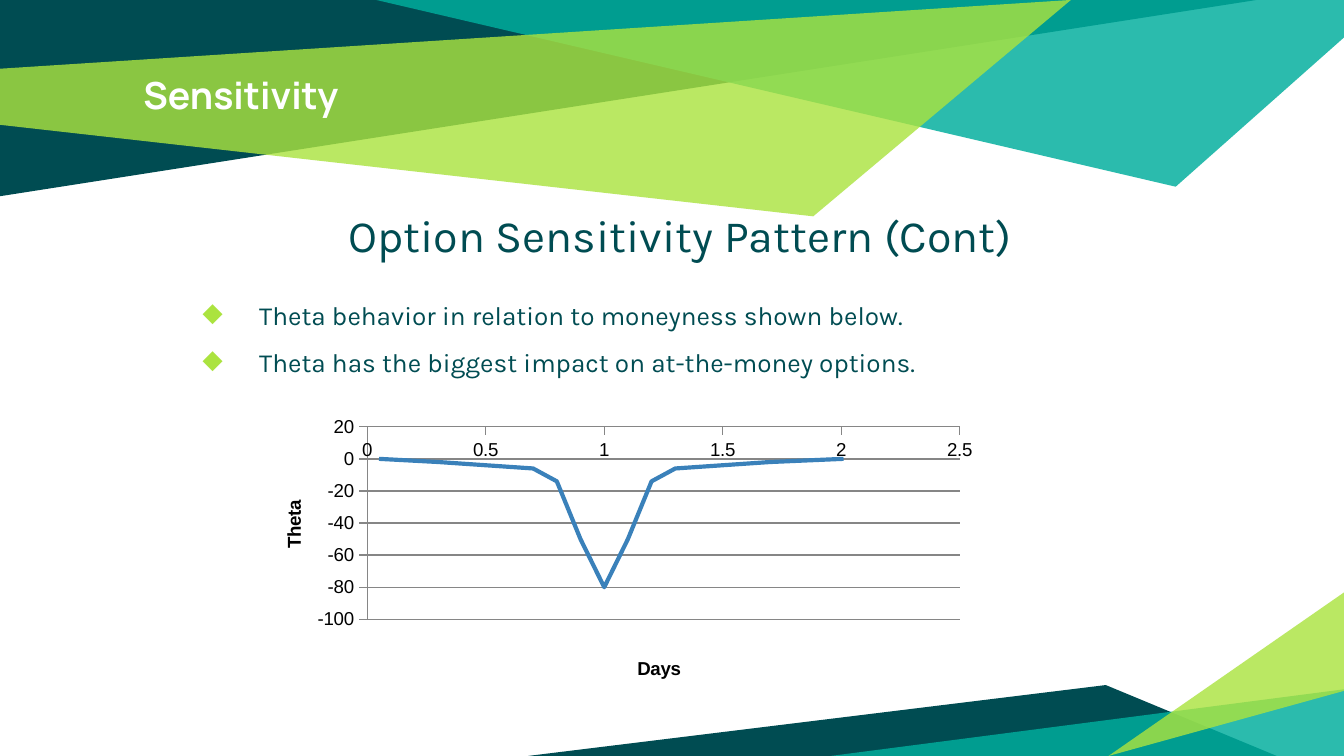
from dataclasses import dataclass

import pptx
import pptx.chart.data
import pptx.dml.color
import pptx.enum.chart
import pptx.enum.text
import pptx.oxml
import pptx.oxml.ns
import pptx.util
from pptx.util import Cm, Pt

RGBColor = pptx.dml.color.RGBColor
DARK = RGBColor(0x00, 0x4C, 0x52)
TEAL = RGBColor(0x00, 0xAE, 0x9D)
LIME = RGBColor(0xAB, 0xE3, 0x3F)
WHITE = RGBColor(0xFF, 0xFF, 0xFF)
BLACK = RGBColor(0x00, 0x00, 0x00)
BLUE = RGBColor(0x3A, 0x81, 0xBA)
GRAY = RGBColor(0x86, 0x86, 0x86)

WIDTH, HEIGHT = 25.4, 14.29  # centimetres


@dataclass
class Facet:
    """A flat polygon; points in centimetres, opacity in percent."""
    points: list[tuple[float, float]]
    color: RGBColor
    opacity: int = 100


FACETS = [
    # Top band
    Facet([(0, 0), (0, 3.71), (23.75, 0)], DARK),
    Facet([(7.11, 0), (22.22, 3.53), (WIDTH, 0.71), (WIDTH, 0)], TEAL, 83),
    Facet([(0, 1.3), (0, 2.36), (15.37, 4.09), (20.24, 0)], LIME, 81),
    # Bottom corner
    Facet([(9.98, HEIGHT), (24.13, HEIGHT), (20.9, 12.95)], DARK),
    Facet([(WIDTH, 13.03), (WIDTH, HEIGHT), (15.7, HEIGHT)], TEAL, 83),
    Facet([(WIDTH, 13.06), (WIDTH, 11.2), (20.95, HEIGHT)], LIME, 81),
]

BULLETS = [
    "Theta behavior in relation to moneyness shown below.",
    "Theta has the biggest impact on at-the-money options.",
]

MONEYNESS = [0.05, 0.3, 0.5, 0.7, 0.8, 0.9, 1, 1.1, 1.2, 1.3, 1.5, 1.7, 2.01]
HALF_THETA = [0, -2, -4, -6, -14, -50]
THETA = HALF_THETA + [-80] + HALF_THETA[::-1]


def draw_facet(slide, facet: Facet) -> None:
    points = [(Cm(x), Cm(y)) for x, y in facet.points]
    builder = slide.shapes.build_freeform(*points[0])
    builder.add_line_segments(points[1:], close=True)
    shape = builder.convert_to_shape()
    shape.shadow.inherit = False
    shape.line.fill.background()
    shape.fill.solid()
    shape.fill.fore_color.rgb = facet.color
    if facet.opacity < 100:
        color = shape.fill._xPr.find(".//" + pptx.oxml.ns.qn("a:srgbClr"))
        alpha = color.makeelement(pptx.oxml.ns.qn("a:alpha"), {"val": str(facet.opacity * 1000)})
        color.append(alpha)


def add_text_frame(slide, left: float, top: float, width: float, height: float):
    box = slide.shapes.add_textbox(Cm(left), Cm(top), Cm(width), Cm(height))
    frame = box.text_frame
    frame.word_wrap = True
    frame.margin_left = frame.margin_right = Cm(0.25)
    frame.margin_top = frame.margin_bottom = Cm(0.25)
    return frame


def write(paragraph, text: str, font_name: str, size: int, color: RGBColor, bold: bool = False) -> None:
    paragraph.text = text
    font = paragraph.font
    font.name, font.size, font.bold = font_name, Pt(size), bold
    font.color.rgb = color


def add_bullet(paragraph, character: str, color: RGBColor) -> None:
    properties = paragraph._p.get_or_add_pPr()
    properties.set("marL", str(Cm(2.54)))
    properties.set("indent", str(Cm(-1.07)))
    namespace = pptx.oxml.ns.nsdecls("a")
    bullet_parts = [
        f'<a:buClr {namespace}><a:srgbClr val="{color}"/></a:buClr>',
        f'<a:buChar {namespace} char="{character}"/>',
    ]
    font_properties = properties.find(pptx.oxml.ns.qn("a:defRPr"))
    for part in bullet_parts:
        font_properties.addprevious(pptx.oxml.parse_xml(part))


def layout_xml(x: float, y: float, size: tuple[float, float] | None = None):
    """Manual chart layout in fractions of the chart; a size makes it the inner plot."""
    entries = [("xMode", "edge"), ("yMode", "edge"), ("x", x), ("y", y)]
    if size:
        entries = [("layoutTarget", "inner"), *entries, ("w", size[0]), ("h", size[1])]
    body = "".join(f'<c:{name} val="{value}"/>' for name, value in entries)
    namespace = pptx.oxml.ns.nsdecls("c")
    return pptx.oxml.parse_xml(
        f"<c:layout {namespace}><c:manualLayout>{body}</c:manualLayout></c:layout>")


def style_axis(axis, title: str, x: float, y: float) -> None:
    write(axis.axis_title.text_frame.paragraphs[0], title, "Arial", 10, BLACK, True)
    title_element = axis.axis_title._element
    for old_layout in title_element.findall(pptx.oxml.ns.qn("c:layout")):
        title_element.remove(old_layout)
    title_element.find(pptx.oxml.ns.qn("c:tx")).addnext(layout_xml(x, y))
    axis.major_tick_mark = pptx.enum.chart.XL_TICK_MARK.OUTSIDE
    axis.minor_tick_mark = pptx.enum.chart.XL_TICK_MARK.NONE
    axis.tick_label_position = pptx.enum.chart.XL_TICK_LABEL_POSITION.NEXT_TO_AXIS
    axis.tick_labels.number_format = "General"
    axis.tick_labels.number_format_is_linked = False
    axis.format.line.color.rgb = GRAY
    axis.format.line.width = Pt(0.75)


def add_theta_chart(slide) -> None:
    data = pptx.chart.data.XyChartData()
    points = data.add_series("Series 1")
    for moneyness, theta in zip(MONEYNESS, THETA):
        points.add_data_point(moneyness, theta)
    chart = slide.shapes.add_chart(
        pptx.enum.chart.XL_CHART_TYPE.XY_SCATTER_SMOOTH_NO_MARKERS,
        Cm(4.7), Cm(7.75), Cm(14), Cm(5.28), data).chart
    chart.has_legend = False
    chart.has_title = False
    chart.font.name, chart.font.size = "Arial", Pt(10)
    chart.font.color.rgb = BLACK

    # Axes: the horizontal one crosses at the top of the scale
    style_axis(chart.category_axis, "Days", 0.52, 0.87)
    style_axis(chart.value_axis, "Theta", 0.04, 0.31)
    chart.category_axis.has_major_gridlines = False
    chart.value_axis.maximum_scale = 20
    chart.value_axis.crosses_at = 20
    chart.value_axis.has_major_gridlines = True
    gridline = chart.value_axis.major_gridlines.format.line
    gridline.color.rgb = GRAY
    gridline.width = Pt(0.75)

    # Curve and plot area
    plot = chart.plots[0]
    plot.vary_by_categories = False
    series = plot.series[0]
    series.marker.style = pptx.enum.chart.XL_MARKER_STYLE.NONE
    series.format.line.color.rgb = BLUE
    series.format.line.width = Pt(2.25)
    plot_area = chart._chartSpace.chart.plotArea
    for old_layout in plot_area.findall(pptx.oxml.ns.qn("c:layout")):
        plot_area.remove(old_layout)
    plot_area.insert(0, layout_xml(0.16, 0.06, (0.8, 0.69)))


def main() -> None:
    presentation = pptx.Presentation()
    presentation.slide_width, presentation.slide_height = Cm(WIDTH), Cm(HEIGHT)
    slide = presentation.slides.add_slide(presentation.slide_layouts[6])

    # Background facets
    for facet in FACETS:
        draw_facet(slide, facet)

    # Title
    title = add_text_frame(slide, 2.46, 1.12, 20.47, 1.63)
    write(title.paragraphs[0], "Sensitivity", "Manrope", 20, WHITE, True)

    # Heading and bullets
    body = add_text_frame(slide, 2.11, 3.68, 21.29, 10.06)
    heading = body.paragraphs[0]
    write(heading, "Option Sensitivity Pattern (Cont)", "Karla", 24, DARK)
    heading.alignment = pptx.enum.text.PP_ALIGN.CENTER
    heading.space_before = Pt(6)
    heading._p.get_or_add_pPr().set("marL", str(Cm(0.2)))
    for index, text in enumerate(BULLETS):
        paragraph = body.add_paragraph()
        write(paragraph, text, "Karla", 14, DARK)
        paragraph.level = 1
        paragraph.line_spacing = 1.5
        paragraph.space_before = Pt(0 if index else 12)
        add_bullet(paragraph, "◆", LIME)

    # Chart
    add_theta_chart(slide)
    presentation.save("out.pptx")


if __name__ == "__main__":
    main()
